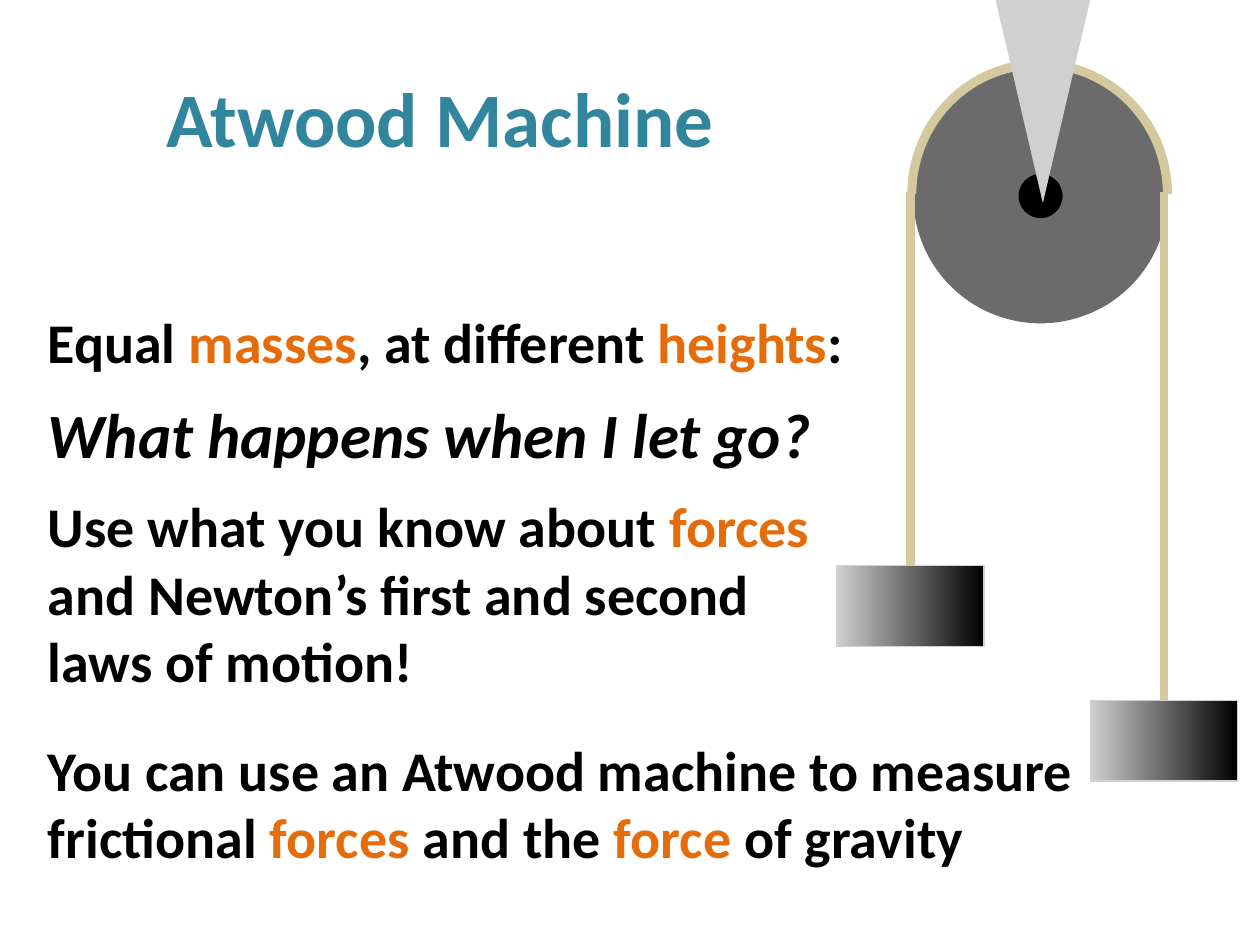
from dataclasses import dataclass

from lxml.etree import SubElement
from pptx import Presentation
from pptx.dml.color import RGBColor as RGB
from pptx.enum.shapes import MSO_CONNECTOR as LINE, MSO_SHAPE as SHAPE
from pptx.enum.text import MSO_ANCHOR as ANCHOR, PP_ALIGN as ALIGN
from pptx.oxml.ns import qn
from pptx.util import Pt


@dataclass(frozen=True)
class Theme:
    font: str = "Calibri"
    title_size: int = 44
    question_size: int = 36
    body_size: int = 32
    title: RGB = RGB(0x31, 0x85, 0x9C)
    text: RGB = RGB(0, 0, 0)
    accent: RGB = RGB(0xE4, 0x6C, 0x0A)
    wheel: RGB = RGB(0x6B, 0x6B, 0x6B)
    rope: RGB = RGB(0xD6, 0xC8, 0x9E)
    metal: RGB = RGB(0xD0, 0xD0, 0xD0)
    dark: RGB = RGB(0, 0, 0)


THEME = Theme()


def style_run(run, size, color, italic=False):
    run.font.name = THEME.font
    run.font.size = Pt(size)
    run.font.bold = True
    run.font.italic = italic
    run.font.color.rgb = color


def place(shape, left, top, width, height):
    shape.left, shape.top = Pt(left), Pt(top)
    shape.width, shape.height = Pt(width), Pt(height)


def add_title(page, box, text):
    title = page.shapes.title
    place(title, *box)
    frame = title.text_frame
    frame.text = text
    frame.vertical_anchor = ANCHOR.MIDDLE
    para = frame.paragraphs[0]
    para.alignment = ALIGN.CENTER
    style_run(para.runs[0], THEME.title_size, THEME.title)


def add_text(page, box, paragraphs, space_before=0, space_after=0):
    """Write (text, size, italic) paragraphs; *stars* mark accented words."""
    frame = page.shapes.add_textbox(*map(Pt, box)).text_frame
    frame.word_wrap = True
    for index, (text, size, italic) in enumerate(paragraphs):
        para = frame.add_paragraph() if index else frame.paragraphs[0]
        para.space_before, para.space_after = Pt(space_before), Pt(space_after)
        for part, words in enumerate(text.split("*")):
            color = THEME.accent if part % 2 else THEME.text
            for row, piece in enumerate(words.split("\n")):
                if row:
                    para.add_line_break()
                if piece:
                    span = para.add_run()
                    span.text = piece
                    style_run(span, size, color, italic)


def add_solid(page, kind, box, color):
    shape = page.shapes.add_shape(kind, *map(Pt, box))
    shape.shadow.inherit = False
    shape.fill.solid()
    shape.fill.fore_color.rgb = color
    shape.line.fill.background()
    return shape


def add_mass(page, box):
    mass = add_solid(page, SHAPE.RECTANGLE, box, THEME.metal)
    mass.fill.gradient()
    mass.fill.gradient_angle = 0
    for stop, position, color in zip(
        mass.fill.gradient_stops, (0, 1), (THEME.metal, THEME.dark)
    ):
        stop.position = position
        stop.color.rgb = color
    mass.line.color.rgb = THEME.metal
    mass.line.width = Pt(0.75)
    return mass


def add_rope(page, x, top, mass):
    rope = page.shapes.add_connector(LINE.STRAIGHT, Pt(x), Pt(top), Pt(x), mass.top)
    rope.end_connect(mass, 0)
    rope.line.color.rgb = THEME.rope
    rope.line.width = Pt(5)
    SubElement(rope._element.spPr, qn("a:effectLst"))


def add_machine(page, box):
    left, top, width, height = box
    center_x, center_y = left + 116.5, top + 112

    # Wheel and axle
    for diameter, color in ((145.5, THEME.wheel), (25.2, THEME.dark)):
        radius = diameter / 2
        circle = (center_x - radius, center_y - radius, diameter, diameter)
        add_solid(page, SHAPE.OVAL, circle, color)

    # Rope over the wheel, then the hanger
    arc = add_solid(
        page, SHAPE.BLOCK_ARC, (left + 40.4, top + 34, 151.2, 154), THEME.rope
    )
    for index, value in enumerate((108, 0, 0.034)):
        arc.adjustments[index] = value
    hanger = add_solid(
        page, SHAPE.ISOSCELES_TRIANGLE, (left + 90.8, top, 54, 116), THEME.metal
    )
    hanger.rotation = 180

    # Equal masses at different heights, each on its own rope
    mass_width, mass_height = 84.2, 46
    for mass_left, mass_top in (
        (left, top + 323.3),
        (left + width - mass_width, top + height - mass_height),
    ):
        mass = add_mass(page, (mass_left, mass_top, mass_width, mass_height))
        add_rope(page, mass_left + mass_width / 2, top + 110, mass)


def main():
    deck = Presentation()
    deck.slide_width, deck.slide_height = Pt(720), Pt(540)
    page = deck.slides.add_slide(deck.slide_layouts[5])

    add_title(page, (0, 21.6, 503.3, 90), "Atwood Machine")
    add_text(
        page,
        (20.2, 416.9, 605.5, 89.3),
        [
            (
                "You can use an Atwood machine to measure "
                "frictional *forces *and the *force *of gravity",
                THEME.body_size,
                False,
            )
        ],
        space_before=6.4,
    )
    add_text(
        page,
        (20.2, 172, 512.6, 239.8),
        [
            ("Equal *masses*, at different *heights*:", THEME.body_size, False),
            ("What happens when I let go?", THEME.question_size, True),
            (
                "Use what you know about *forces \n*"
                "and Newton’s first and second \nlaws of motion!",
                THEME.body_size,
                False,
            ),
        ],
        space_after=12,
    )
    add_machine(page, (478.1, 0, 229.1, 446.3))
    deck.save("out.pptx")


if __name__ == "__main__":
    main()
